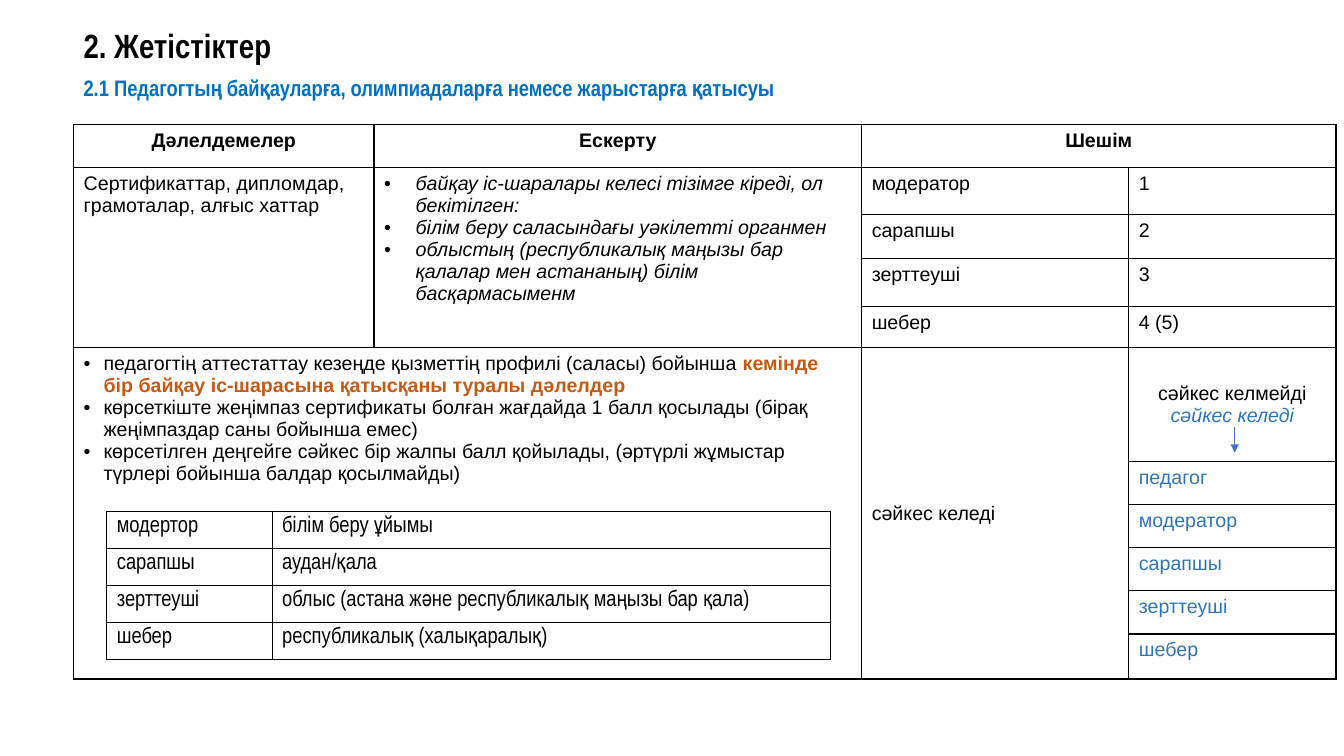
from lxml import etree
from pptx import Presentation
from pptx.dml.color import RGBColor
from pptx.enum.shapes import MSO_CONNECTOR
from pptx.enum.text import MSO_ANCHOR, PP_ALIGN
from pptx.oxml.ns import qn
from pptx.util import Pt

LEFT, CENTER = PP_ALIGN.LEFT, PP_ALIGN.CENTER
TOP, MIDDLE = MSO_ANCHOR.TOP, MSO_ANCHOR.MIDDLE
STRAIGHT = MSO_CONNECTOR.STRAIGHT
COLORS = {"black": "000000", "title": "0070C0", "orange": "C55A11",
          "blue": "2E75B6", "arrow": "4472C4"}
SANS, NARROW = "Arial", "Arial Narrow"


def write(frame, paras, size=14, font=SANS, align=LEFT, indent=0):
    for i, runs in enumerate(paras):
        para = frame.paragraphs[0] if i == 0 else frame.add_paragraph()
        para.alignment = align
        if indent:
            props = para._p.get_or_add_pPr()
            props.set("marL", str(Pt(indent)))
            props.set("indent", str(-Pt(indent)))
            etree.SubElement(props, qn("a:buFont"), typeface=SANS)
            etree.SubElement(props, qn("a:buChar"), char="•")
        for text, color, style in runs:
            run = para.add_run()
            run.text = text
            run.font.size = Pt(size)
            run.font.name = font
            run.font.bold = "b" in style
            run.font.italic = "i" in style
            run.font.color.rgb = RGBColor.from_string(COLORS[color])


def grid(left, top, cols, rows):
    table = slide.shapes.add_table(len(rows), len(cols), Pt(left), Pt(top),
                                   Pt(sum(cols)), Pt(sum(rows))).table
    table.first_row = table.horz_banding = False
    for col, width in zip(table.columns, cols):
        col.width = Pt(width)
    for row, height in zip(table.rows, rows):
        row.height = Pt(height)
    for cell in table.iter_cells():
        props = cell._tc.get_or_add_tcPr()
        for side in ("lnL", "lnR", "lnT", "lnB"):
            line = etree.SubElement(props, qn("a:" + side), w=str(Pt(1)))
            fill = etree.SubElement(line, qn("a:solidFill"))
            etree.SubElement(fill, qn("a:srgbClr"), val=COLORS["black"])
        cell.fill.background()
    return table


deck = Presentation()
deck.slide_width, deck.slide_height = Pt(960), Pt(540)
slide = deck.slides.add_slide(deck.slide_layouts[6])

heads = [
    (10.8, 828, 42.5, "2. Жетістіктер", 24, "black", MIDDLE),
    (49.7, 604, 26.6, "2.1 Педагогтың байқауларға, олимпиадаларға немесе жарыстарға қатысуы",
     16, "title", TOP),
]
for top, width, height, text, size, color, anchor in heads:
    frame = slide.shapes.add_textbox(Pt(52.6), Pt(top), Pt(width), Pt(height)).text_frame
    frame.word_wrap = True
    frame.vertical_anchor = anchor
    write(frame, [[(text, color, "b")]], size, NARROW)

main = grid(52.6, 89.2, [214.6, 348.3, 190.8, 148],
            [30.7, 33.6, 31.4, 33.9, 29.6, 81.4, 30.7, 30.7, 30.7, 31.1, 32.1])
for first, last in [((0, 2), (0, 3)), ((1, 0), (4, 0)), ((1, 1), (4, 1)),
                    ((5, 0), (10, 1)), ((5, 2), (10, 2))]:
    main.cell(*first).merge(main.cell(*last))

for col, text in enumerate(["Дәлелдемелер", "Ескерту", "Шешім"]):
    write(main.cell(0, col).text_frame, [[(text, "black", "b")]], align=CENTER)

write(main.cell(1, 0).text_frame,
      [[("Сертификаттар, дипломдар, грамоталар, алғыс хаттар", "black", "")]])

notes = [
    "байқау іс-шаралары келесі тізімге кіреді, ол бекітілген:",
    "білім беру саласындағы уәкілетті органмен",
    "облыстың (республикалық маңызы бар қалалар мен астананың) білім басқармасыменм",
]
write(main.cell(1, 1).text_frame, [[(text, "black", "i")] for text in notes], indent=22.5)

scores = [("модератор", "1"), ("сарапшы", "2"), ("зерттеуші", "3"), ("шебер", "4 (5)")]
for row, pair in enumerate(scores, 1):
    for col, text in enumerate(pair, 2):
        write(main.cell(row, col).text_frame, [[(text, "black", "")]])

rules = [
    [("педагогтің аттестаттау кезеңде қызметтің профилі (саласы) бойынша ", "black", ""),
     ("кемінде бір байқау іс-шарасына қатысқаны туралы дәлелдер", "orange", "b")],
    [("көрсеткіште жеңімпаз сертификаты болған жағдайда 1 балл қосылады "
      "(бірақ жеңімпаздар саны бойынша емес)", "black", "")],
    [("көрсетілген деңгейге сәйкес бір жалпы балл қойылады, "
      "(әртүрлі жұмыстар түрлері бойынша балдар қосылмайды)", "black", "")],
]
write(main.cell(5, 0).text_frame, rules, indent=14.2)

write(main.cell(5, 2).text_frame, [[("сәйкес келеді", "black", "")]])
write(main.cell(5, 3).text_frame,
      [[("сәйкес келмейді", "black", "")], [("сәйкес келеді", "blue", "i")]], align=CENTER)
for col in (2, 3):
    main.cell(5, col).vertical_anchor = MIDDLE

for row, text in enumerate(["педагог", "модератор", "сарапшы", "зерттеуші", "шебер"], 6):
    write(main.cell(row, 3).text_frame, [[(text, "blue", "")]])

arrow = slide.shapes.add_connector(STRAIGHT, Pt(882), Pt(305.3), Pt(882), Pt(323.3))
arrow.line.color.rgb = RGBColor.from_string(COLORS["arrow"])
arrow.line.width = Pt(0.5)
etree.SubElement(arrow.line._get_or_add_ln(), qn("a:tailEnd"), type="triangle")
etree.SubElement(arrow._element.spPr, qn("a:effectLst"))

levels = [
    ("модертор", "білім беру ұйымы"),
    ("сарапшы", "аудан/қала"),
    ("зерттеуші", "облыс (астана және республикалық маңызы бар қала)"),
    ("шебер", "республикалық (халықаралық)"),
]
inner = grid(76.3, 365.3, [118.1, 398.9], [26.4] * len(levels))
for row, pair in enumerate(levels):
    for col, text in enumerate(pair):
        write(inner.cell(row, col).text_frame, [[(text, "black", "")]], 16, NARROW)

deck.save("out.pptx")
